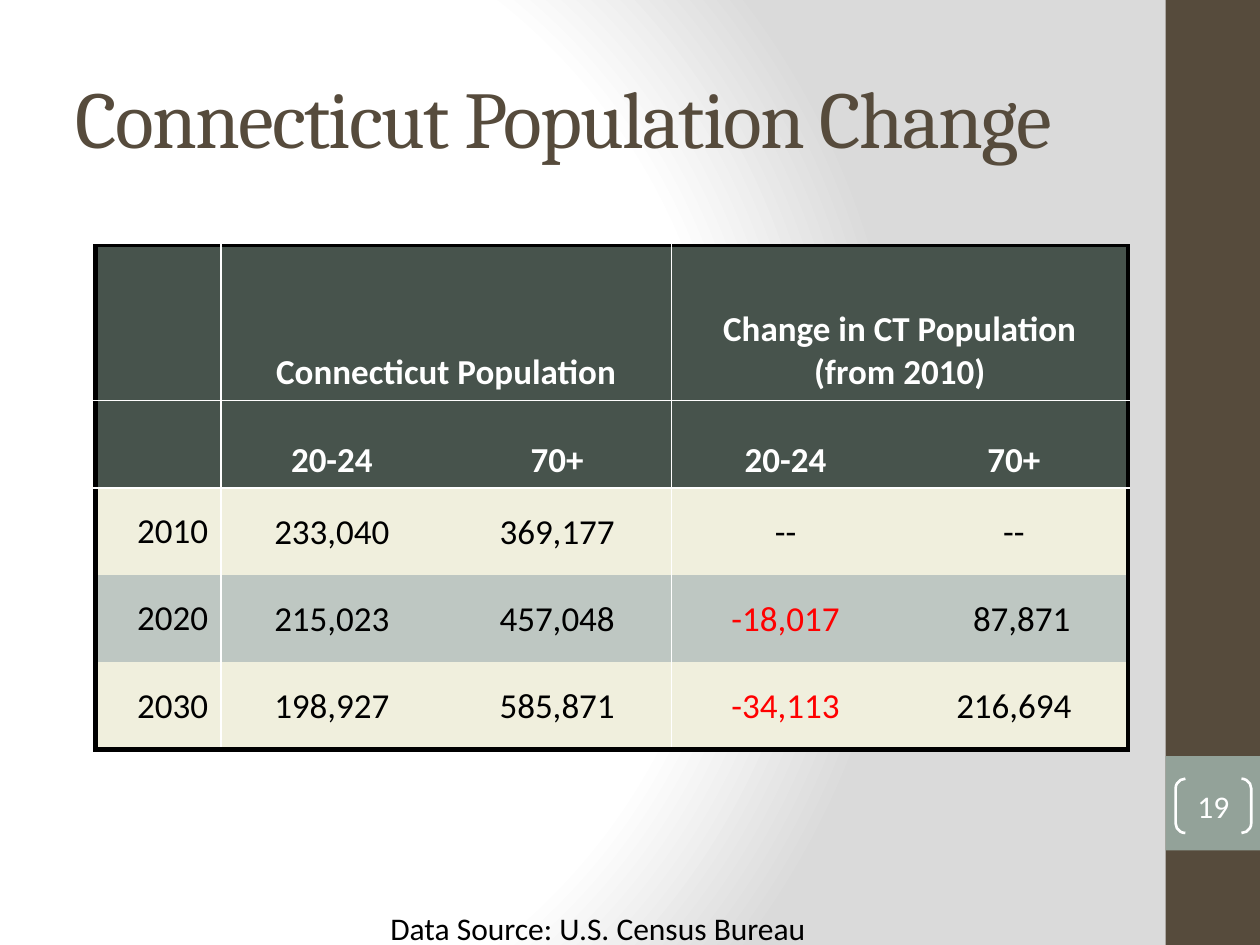
from pptx import Presentation
from pptx.dml.color import RGBColor
from pptx.enum.shapes import MSO_SHAPE as Shape
from pptx.enum.text import MSO_ANCHOR as Anchor, MSO_AUTO_SIZE as Auto, PP_ALIGN as Align
from pptx.oxml import parse_xml
from pptx.oxml.ns import nsdecls, qn
from pptx.util import Pt

TITLE = "Connecticut Population Change"
SOURCE = "Data Source: U.S. Census Bureau"
NUMBER = "19"
GROUPS = ["Connecticut Population", "Change in CT Population\n(from 2010)"]
AGES = ["20-24", "70+", "20-24", "70+"]
DATA = [
    ("2010", "233,040", "369,177", "--", "--"),
    ("2020", "215,023", "457,048", "-18,017", "87,871"),
    ("2030", "198,927", "585,871", "-34,113", "216,694"),
]
COLORS = {
    "brown": "564B3C", "sage": "93A299", "white": "FFFFFF", "black": "000000",
    "gray": "DADADA", "head": "47534C", "cream": "F0EFDD", "mist": "BEC7C2",
    "red": "FF0000",
}
COLS = [71.5, 127, 130.5, 130.5, 130.5]
ROWS = [88.5] + [49.9] * 4
# Lines by grid position: (colour, width)
THIN, THICK = ("white", 1), ("black", 3)
ACROSS = {0: ("black", 2.25), 1: THIN, 2: THIN, 5: THICK}
DOWN = {0: THICK, 1: THIN, 3: THIN, 5: THICK}
HANG = 27


def rgb(name):
    return RGBColor.from_string(COLORS[name])


def put(frame, text, size=20, font="Calibri", color="black", bold=False,
        align=Align.LEFT, anchor=Anchor.TOP, pad=(7.2, 3.6, 7.2, 3.6),
        left=0, hang=0, spacing=0):
    frame.word_wrap = True
    frame.vertical_anchor = anchor
    (frame.margin_left, frame.margin_top,
     frame.margin_right, frame.margin_bottom) = map(Pt, pad)
    for i, line in enumerate(text.split("\n")):
        para = frame.add_paragraph() if i else frame.paragraphs[0]
        para.alignment = align
        props = para._p.get_or_add_pPr()
        props.set("marL", str(Pt(left)))
        props.set("indent", str(Pt(hang)))
        run = para.add_run()
        run.text = line
        run.font.size, run.font.name, run.font.bold = Pt(size), font, bold
        run.font.color.rgb = rgb(color)
        if spacing:
            run._r.get_or_add_rPr().set("spc", str(spacing * 100))


def fill_cell(cell, text, **fmt):
    """Cells keep anchor and margins on the cell, not on the text frame."""
    anchor = fmt["anchor"]
    pad = fmt.get("pad", (7.2, 3.6, 7.2, 3.6))
    put(cell.text_frame, text, **fmt)
    body = cell.text_frame._txBody.find(qn("a:bodyPr"))
    body.attrib.clear()
    cell.vertical_anchor = anchor
    (cell.margin_left, cell.margin_top,
     cell.margin_right, cell.margin_bottom) = map(Pt, pad)


def rule(cell, side, line):
    if line:
        color, width = line
        paint = f'<a:solidFill><a:srgbClr val="{COLORS[color]}"/></a:solidFill>'
    else:
        width, paint = 0, "<a:noFill/>"
    cell._tc.get_or_add_tcPr().append(parse_xml(
        f'<a:ln{side} {nsdecls("a")} w="{Pt(width)}">{paint}</a:ln{side}>'))


def add_box(slide, kind, place, fill=None):
    box = slide.shapes.add_shape(kind, *map(Pt, place))
    box.shadow.inherit = False
    if fill:
        box.fill.solid()
        box.fill.fore_color.rgb = rgb(fill)
        box.line.fill.background()
    else:
        box.fill.background()
    return box


def add_text(slide, place, text, **fmt):
    box = slide.shapes.add_textbox(*map(Pt, place))
    put(box.text_frame, text, **fmt)
    return box


def set_back(slide):
    slide.background.fill.solid()
    props = slide.element.find(".//" + qn("p:bgPr"))
    stops = "".join(
        f'<a:gs pos="{pos * 1000}"><a:srgbClr val="{COLORS[name]}"/></a:gs>'
        for pos, name in [(0, "white"), (75, "white"), (100, "gray")])
    props.replace(props[0], parse_xml(
        f'<a:gradFill {nsdecls("a")} rotWithShape="1"><a:gsLst>{stops}</a:gsLst>'
        '<a:path path="circle"><a:fillToRect l="20000" t="50000" r="100000"'
        ' b="50000"/></a:path></a:gradFill>'))


def add_grid(slide):
    table = slide.shapes.add_table(
        len(ROWS), len(COLS), Pt(54.7), Pt(140.4), Pt(sum(COLS)), Pt(sum(ROWS))).table
    for col, width in zip(table.columns, COLS):
        col.width = Pt(width)
    for row, height in zip(table.rows, ROWS):
        row.height = Pt(height)

    for r in range(len(ROWS)):
        for c in range(len(COLS)):
            cell = table.cell(r, c)
            last = c + 1 if r or c not in (1, 3) else c + 2
            rule(cell, "L", DOWN.get(c))
            rule(cell, "R", DOWN.get(last))
            rule(cell, "T", ACROSS.get(r))
            rule(cell, "B", ACROSS.get(r + 1))
            cell.fill.solid()
            shade = "head" if r < 2 else "mist" if r % 2 else "cream"
            cell.fill.fore_color.rgb = rgb(shade)

    head = dict(color="white", bold=True, align=Align.CENTER,
                anchor=Anchor.BOTTOM, hang=-HANG)
    for c, text in zip((1, 3), GROUPS):
        table.cell(0, c).merge(table.cell(0, c + 1))
        fill_cell(table.cell(0, c), text, left=HANG, **head)
    for c, text in enumerate(AGES, 1):
        fill_cell(table.cell(1, c), text, left=HANG if c < 3 else 0, **head)
    for r, (year, *values) in enumerate(DATA, 2):
        fill_cell(table.cell(r, 0), year, align=Align.RIGHT,
                  anchor=Anchor.MIDDLE, left=HANG, hang=-HANG)
        for c, text in enumerate(values, 1):
            loss = text.startswith("-") and text != "--"
            fill_cell(table.cell(r, c), text, color="red" if loss else "black",
                      align=Align.CENTER, anchor=Anchor.MIDDLE,
                      pad=(0.7, 0.7, 0.7, 0), left=9 if text == "87,871" else 0)


def main():
    deck = Presentation()
    deck.slide_width, deck.slide_height = Pt(720), Pt(540)
    slide = deck.slides.add_slide(deck.slide_layouts[6])
    set_back(slide)
    add_box(slide, Shape.RECTANGLE, (666, 0, 54, 540), "brown")
    add_box(slide, Shape.RECTANGLE, (666, 432, 54, 54), "sage")
    add_text(slide, (36, 21.6, 600, 90), TITLE, size=46, font="Cambria",
             color="brown", anchor=Anchor.MIDDLE, spacing=-1)
    add_grid(slide)
    note = add_text(slide, (216, 516, 288, 26.6), SOURCE, size=18)
    note.text_frame.auto_size = Auto.SHAPE_TO_FIT_TEXT

    badge = add_box(slide, Shape.DOUBLE_BRACKET, (671.8, 445, 43.2, 31))
    badge.adjustments[0] = 0.18
    badge.line.color.rgb = rgb("white")
    badge.line.width = Pt(1.5)
    put(badge.text_frame, NUMBER, size=18, color="white", align=Align.CENTER,
        anchor=Anchor.MIDDLE, pad=(0, 0, 0, 0))
    deck.save("out.pptx")


if __name__ == "__main__":
    main()
